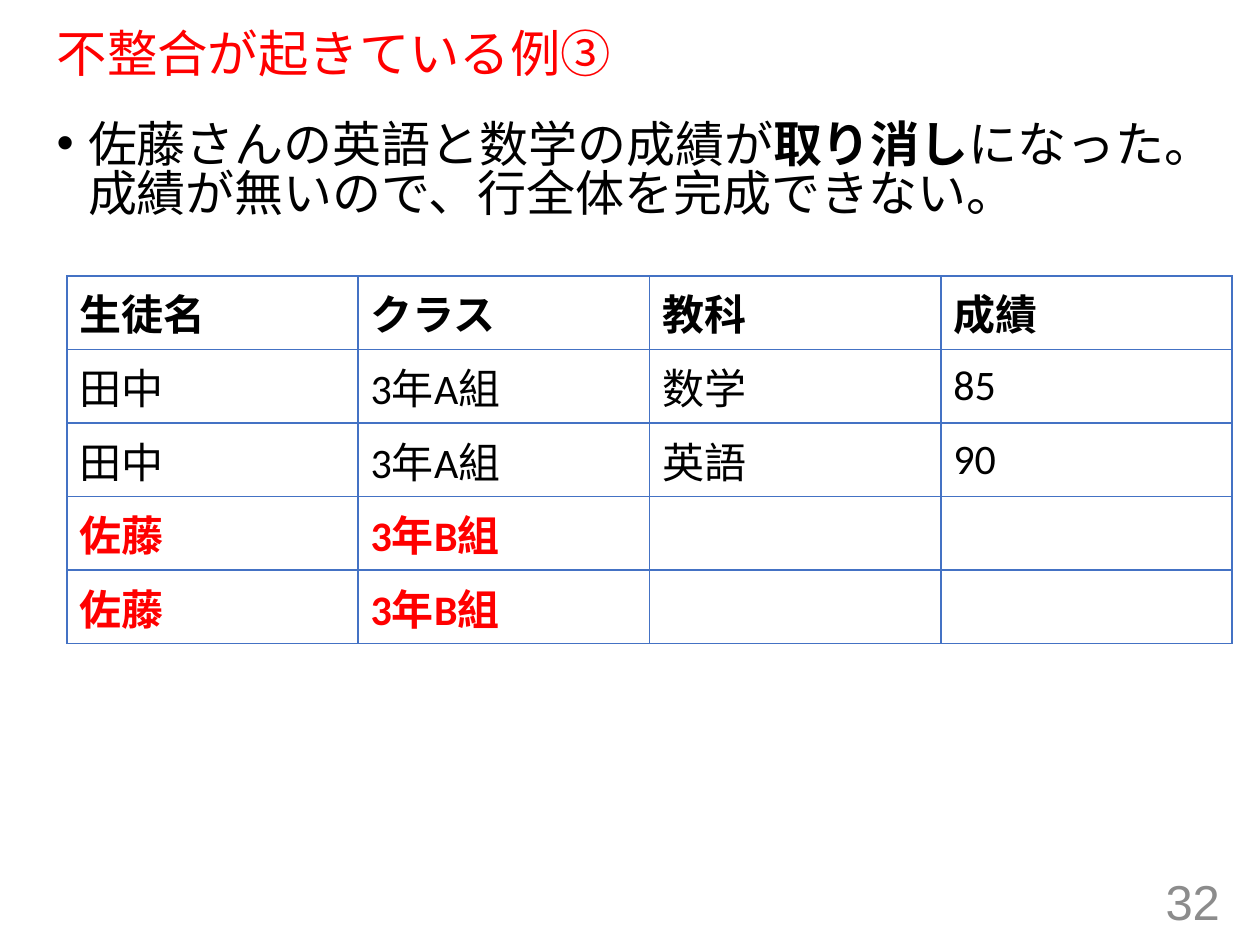
from dataclasses import dataclass

from lxml.etree import SubElement
from pptx import Presentation
from pptx.dml.color import RGBColor
from pptx.enum.text import MSO_ANCHOR as Anchor, MSO_AUTO_SIZE as AutoSize, PP_ALIGN as Align
from pptx.oxml.ns import qn
from pptx.util import Inches, Pt

WIDTH, HEIGHT = Inches(10), Inches(7.5)
TITLE_ONLY = 5
BLACK, RED, GRAY, BLUE = "000000", "FF0000", "8C8C8C", "4472C4"


@dataclass
class Area:
    left: float
    top: float
    width: float
    height: float

    def lengths(self) -> tuple[int, int, int, int]:
        return (int(self.left * WIDTH), int(self.top * HEIGHT),
                int(self.width * WIDTH), int(self.height * HEIGHT))


@dataclass
class Style:
    size: float
    color: str = BLACK
    bold: bool = False
    font: str = "Arial"


@dataclass
class Row:
    texts: tuple[str, ...]
    style: Style


TITLE_AREA = Area(0.035, 0.025, 0.925, 0.068)
BODY_AREA = Area(0.035, 0.124, 0.925, 0.176)
NUMBER_AREA = Area(0.753, 0.927, 0.225, 0.053)
TABLE_AREA = Area(0.053, 0.292, 0.925, 0.389)

PLAIN = Style(24, font="Calibri")
HEADING = Style(24, bold=True, font="Calibri")
ALERT = Style(24, RED, True, "Calibri")

ROWS = [
    Row(("生徒名", "クラス", "教科", "成績"), HEADING),
    Row(("田中", "3年A組", "数学", "85"), PLAIN),
    Row(("田中", "3年A組", "英語", "90"), PLAIN),
    Row(("佐藤", "3年B組", "", ""), ALERT),
    Row(("佐藤", "3年B組", "", ""), ALERT),
]
MESSAGE = [
    ("佐藤さんの英語と数学の成績が", Style(28)),
    ("取り消し", Style(28, bold=True)),
    ("になった。成績が無いので、行全体を完成できない。", Style(28)),
]


def rgb(color: str) -> RGBColor:
    return RGBColor.from_string(color)


def format_span(span, style: Style) -> None:
    span.font.size = Pt(style.size)
    span.font.name = style.font
    span.font.bold = style.bold
    span.font.color.rgb = rgb(style.color)


def format_para(para, style: Style) -> None:
    for span in para.runs:
        format_span(span, style)


def draw_title(slide, text: str) -> None:
    title = slide.shapes.title
    title.left, title.top, title.width, title.height = TITLE_AREA.lengths()
    frame = title.text_frame
    frame.text = text
    frame.auto_size = AutoSize.NONE
    frame.vertical_anchor = Anchor.MIDDLE
    para = frame.paragraphs[0]
    para.alignment = Align.LEFT
    para.line_spacing = 0.9
    format_para(para, Style(28.8, RED))


def add_text_frame(slide, area: Area, anchor: Anchor):
    frame = slide.shapes.add_textbox(*area.lengths()).text_frame
    frame.word_wrap = True
    frame.vertical_anchor = anchor
    return frame


def draw_message(slide) -> None:
    para = add_text_frame(slide, BODY_AREA, Anchor.TOP).paragraphs[0]
    para.line_spacing = 0.83
    para.space_before = Pt(10)
    props = para._p.get_or_add_pPr()
    props.set("marL", str(Inches(0.25)))
    props.set("indent", str(-Inches(0.25)))
    SubElement(props, qn("a:buFont"), typeface="Arial")
    SubElement(props, qn("a:buChar"), char="•")
    for text, style in MESSAGE:
        span = para.add_run()
        span.text = text
        format_span(span, style)


def draw_number(slide, text: str) -> None:
    frame = add_text_frame(slide, NUMBER_AREA, Anchor.MIDDLE)
    frame.text = text
    para = frame.paragraphs[0]
    para.alignment = Align.RIGHT
    format_para(para, Style(28, GRAY))


def format_cell(cell, text: str, style: Style) -> None:
    cell.text = text
    cell.vertical_anchor = Anchor.MIDDLE
    format_para(cell.text_frame.paragraphs[0], style)
    props = cell._tc.get_or_add_tcPr()
    for side in ("lnL", "lnR", "lnT", "lnB"):
        line = SubElement(props, qn(f"a:{side}"), w=str(Pt(1)))
        fill = SubElement(line, qn("a:solidFill"))
        SubElement(fill, qn("a:srgbClr"), val=BLUE)
    cell.fill.background()


def draw_table(slide) -> None:
    table = slide.shapes.add_table(len(ROWS), len(ROWS[0].texts), *TABLE_AREA.lengths()).table
    table.first_row = False
    table.horz_banding = False
    for row_index, row in enumerate(ROWS):
        for column_index, text in enumerate(row.texts):
            format_cell(table.cell(row_index, column_index), text, row.style)


def main() -> None:
    deck = Presentation()
    deck.slide_width, deck.slide_height = WIDTH, HEIGHT
    slide = deck.slides.add_slide(deck.slide_layouts[TITLE_ONLY])
    draw_title(slide, "不整合が起きている例③")
    draw_message(slide)
    draw_number(slide, "32")
    draw_table(slide)
    deck.save("out.pptx")


if __name__ == "__main__":
    main()
